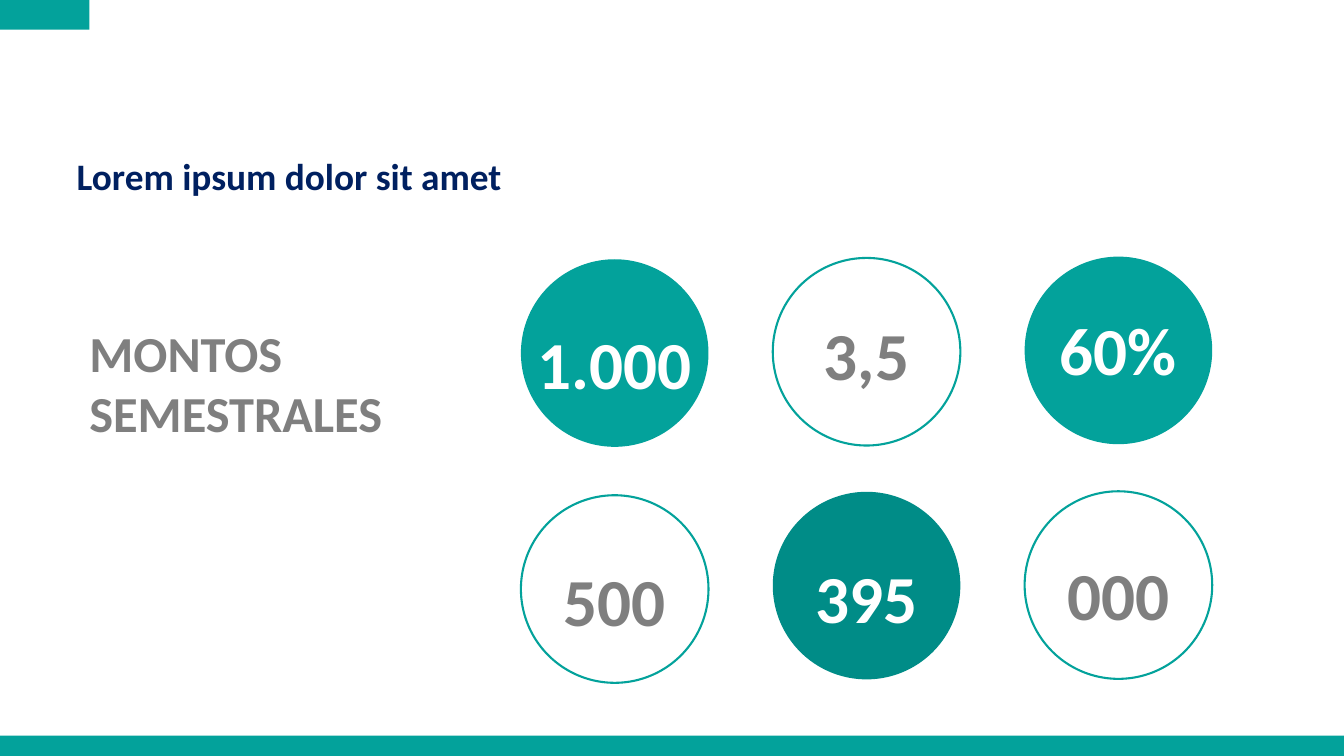
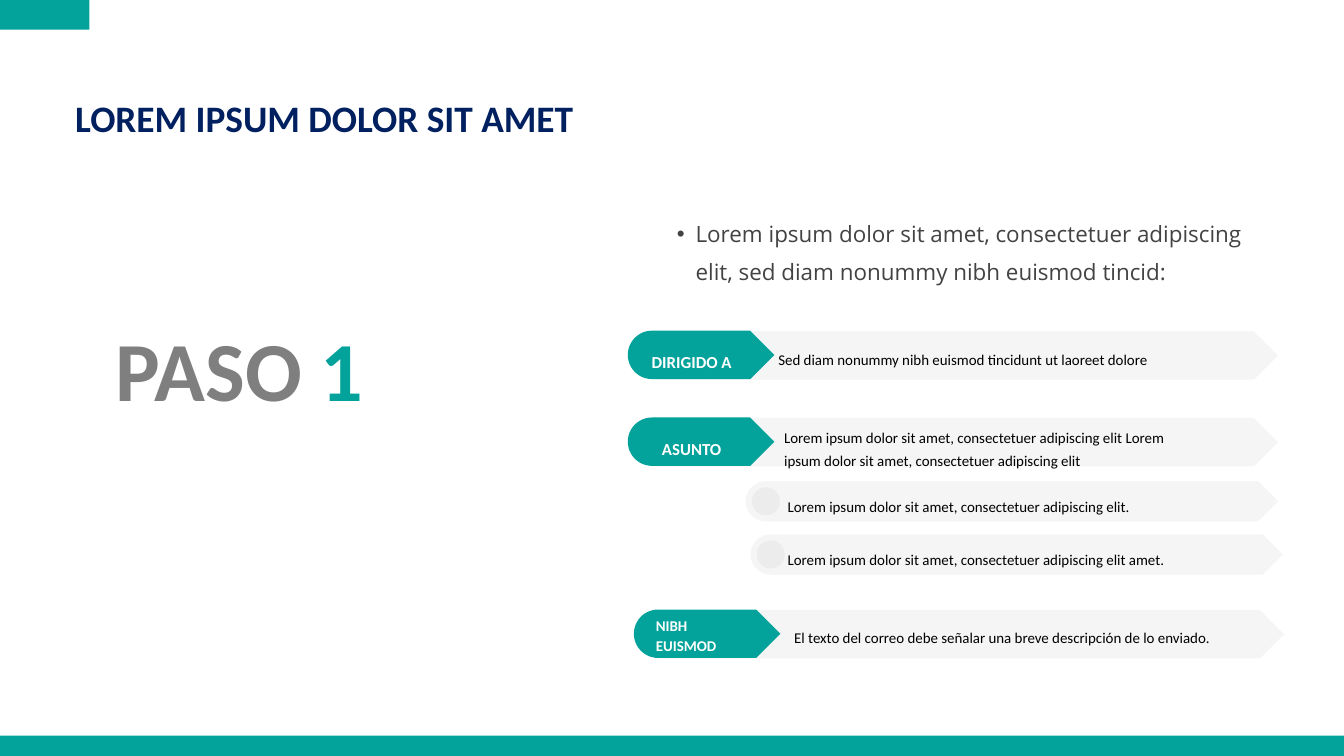
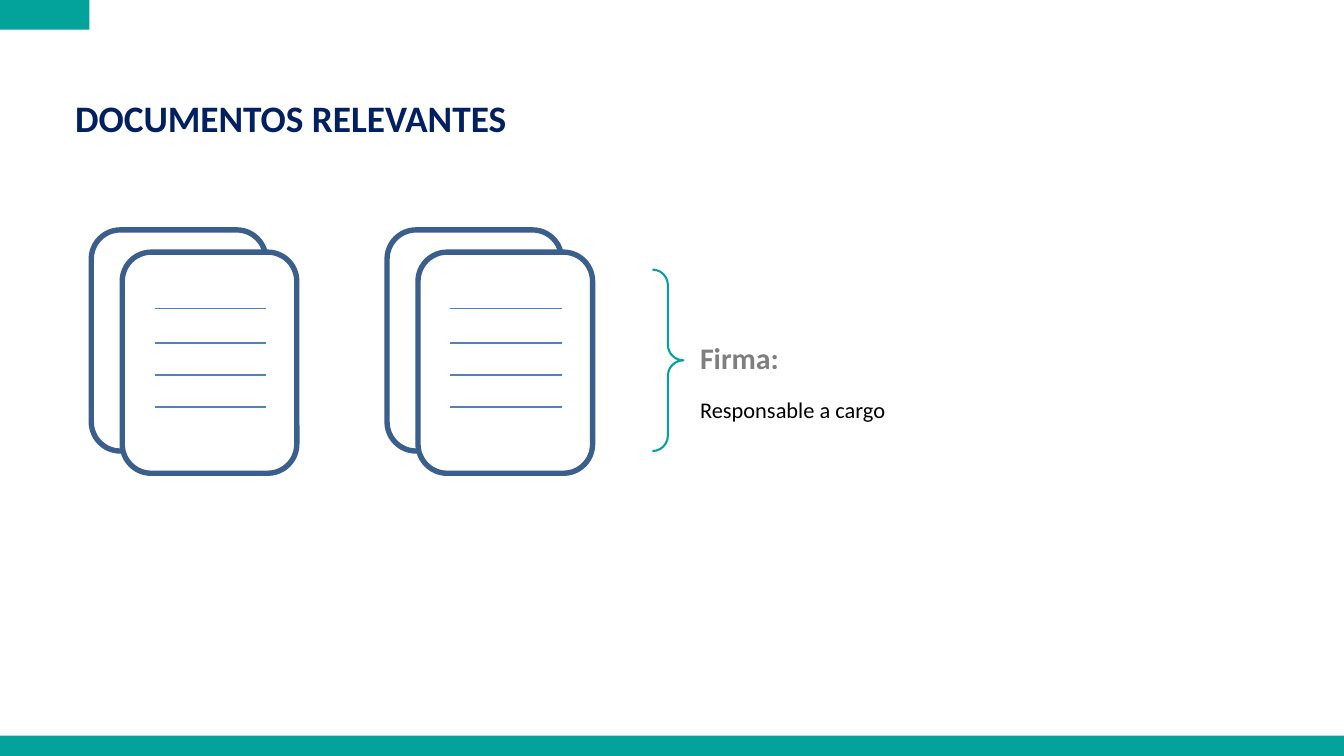
from math import cos, pi, sin

from lxml.etree import SubElement
from pptx import Presentation
from pptx.dml.color import RGBColor
from pptx.enum.shapes import MSO_CONNECTOR as Connector, MSO_SHAPE as Preset
from pptx.enum.text import MSO_ANCHOR as Anchor, MSO_AUTO_SIZE as AutoSize, PP_ALIGN as Align
from pptx.oxml.ns import qn
from pptx.util import Cm, Pt

# Palette and type
TEAL, DEEP_TEAL, NAVY, GREY = "03A29B", "008C87", "002060", "7F7F7F"
WHITE, BLACK, INK, SHADE = "FFFFFF", "000000", "434343", "191919"
PAGE_EDGE, RULE = "3A5F8C", "4F81BD"
CALIBRI, OPEN_SANS = "Calibri", "Open Sans"
SHADE_OPACITY = 4

TITLE_ONLY, TITLE_AND_BODY = 5, 1
TITLE_SIZE = (25.93, 1.7)


def rgb(hex_string):
    return RGBColor.from_string(hex_string)


def lengths(values):
    return [Cm(value) for value in values]


# Painting and text helpers
def paint(shape, fill=None, line=None, width=2.25, opacity=None):
    shape.shadow.inherit = False
    if fill:
        shape.fill.solid()
        shape.fill.fore_color.rgb = rgb(fill)
        if opacity:
            colour = shape.fill._xPr.find(qn("a:solidFill"))[0]
            SubElement(colour, qn("a:alpha"), val=str(opacity * 1000))
    else:
        shape.fill.background()
    if line:
        shape.line.color.rgb = rgb(line)
        shape.line.width = Pt(width)
    else:
        shape.line.fill.background()


def add_preset(slide, preset, box, **style):
    shape = slide.shapes.add_shape(preset, *lengths(box))
    paint(shape, **style)
    return shape


def add_run(paragraph, words, size, colour, bold=False, font=CALIBRI):
    run = paragraph.add_run()
    run.text = words
    run.font.name, run.font.size, run.font.bold = font, Pt(size), bold
    run.font.color.rgb = rgb(colour)


def prepare_frame(frame, inset=(0, 0)):
    frame.word_wrap = True
    frame.auto_size = AutoSize.NONE
    frame.vertical_anchor = Anchor.TOP
    frame.margin_left = frame.margin_right = Cm(inset[0])
    frame.margin_top = frame.margin_bottom = Cm(inset[1])


def format_paragraph(paragraph, align=Align.LEFT, spacing=1.0, before=0):
    paragraph.alignment = align
    paragraph.line_spacing = spacing
    paragraph.space_before = Pt(before)


def add_text(slide, box, *paragraphs, inset=(0, 0), before=0, **layout):
    """Each paragraph is a list of runs: (words, size, colour, bold)."""
    frame = slide.shapes.add_textbox(*lengths(box)).text_frame
    prepare_frame(frame, inset)
    for index, runs in enumerate(paragraphs):
        paragraph = frame.add_paragraph() if index else frame.paragraphs[0]
        format_paragraph(paragraph, before=before if index else 0, **layout)
        for run in runs:
            add_run(paragraph, *run)


def place(placeholder, box):
    placeholder.left, placeholder.top, placeholder.width, placeholder.height = lengths(box)
    prepare_frame(placeholder.text_frame)
    return placeholder.text_frame.paragraphs[0]


# Shared slide base: title, bottom band, corner tab
def add_base(deck, layout, title, left=2.84, top=3.25):
    slide = deck.slides.add_slide(deck.slide_layouts[layout])
    heading = place(slide.shapes.title, (left, top, *TITLE_SIZE))
    format_paragraph(heading, spacing=1.21)
    add_run(heading, title, 40, NAVY, True)
    add_preset(slide, Preset.RECTANGLE, (0, 27.81, 50.8, 0.77), fill=TEAL)
    add_preset(slide, Preset.RECTANGLE, (0, 0, 3.38, 1.12), fill=TEAL)
    return slide


# Slide 1: amounts in circles
def add_amount(slide, left, top, amount, drop, fill):
    diameter = 7.09
    outline = None if fill else TEAL
    add_preset(slide, Preset.OVAL, (left, top, diameter, diameter), fill=fill, line=outline)
    add_text(slide, (left, top + drop, diameter, 4.32),
             [(amount, 72, WHITE if fill else GREY, True)], align=Align.CENTER, spacing=1.4)


def build_amounts(deck):
    slide = add_base(deck, TITLE_ONLY, "Lorem ipsum dolor sit amet", 2.9, 5.44)
    amounts = [  # top, amount, drop of the number, fill
        (9.8, "1.000", 1.17, TEAL), (9.75, "3,5", 0.89, None), (9.7, "60%", 0.74, TEAL),
        (18.72, "500", 1.22, None), (18.59, "395", 1.22, DEEP_TEAL), (18.57, "000", 1.14, None),
    ]
    for index, amount in enumerate(amounts):
        add_amount(slide, 19.69 + index % 3 * 9.52, *amount)
    add_text(slide, (3.38, 12.17, 11.76, 4.62),
             [("MONTOS", 54, GREY, True)], [("SEMESTRALES", 54, GREY, True)])


# Slide 2: step with labelled arrow bars
def add_arrow_bar(slide, box, fill, opacity=None):
    """Bar with a half-round left end and a pointed right end."""
    left, top, width, height = box
    radius, steps = height / 2, 24
    right, middle = left + width, top + radius
    outline = [(right - radius, top), (right, middle), (right - radius, top + height)]
    for step in range(steps + 1):
        angle = pi / 2 + pi * step / steps
        outline.append((left + radius + radius * cos(angle), middle + radius * sin(angle)))
    points = [tuple(lengths(point)) for point in outline]
    builder = slide.shapes.build_freeform(*points[0])
    builder.add_line_segments(points[1:], close=True)
    paint(builder.convert_to_shape(), fill=fill, opacity=opacity)


def add_detail(slide, box, detail):
    add_text(slide, box, [(detail, 16, BLACK)], spacing=1.31)


def add_field(slide, left, top, label, detail, offset, width, stacked=False):
    add_arrow_bar(slide, (left, top, 24.33, 1.83), SHADE, SHADE_OPACITY)
    add_arrow_bar(slide, (left - 0.25, top - 0.02, 5.54, 1.83), TEAL)
    if stacked:
        add_text(slide, (left + 0.58, top + 0.18, 3, 1.27), [(label, 16, WHITE, True)],
                 spacing=1.11)
    else:
        add_text(slide, (left + 0.3, top + 0.46, 3.73, 0.84), [(label, 18, WHITE, True)],
                 align=Align.CENTER, spacing=1.4)
    add_detail(slide, (left + offset[0], top + offset[1], width, 0.71), detail)


def add_subject_item(slide, left, top, detail):
    height, dot = 1.52, 1.06
    margin = (height - dot) / 2
    add_arrow_bar(slide, (left, top, 20.12, height), SHADE, SHADE_OPACITY)
    add_preset(slide, Preset.OVAL, (left + margin, top + margin, dot, dot),
               fill=SHADE, opacity=SHADE_OPACITY)
    add_detail(slide, (29.77, top + 0.4, 18, 0.71), detail)


def add_intro(placeholder, box, words):
    item = place(placeholder, box)
    item.level = 1
    format_paragraph(item, spacing=1.4)
    properties = item._p.get_or_add_pPr()
    properties.set("marL", str(Cm(1.45)))
    properties.set("indent", str(-Cm(0.71)))
    SubElement(SubElement(properties, qn("a:buClr")), qn("a:srgbClr"), val=INK)
    SubElement(properties, qn("a:buFont"), typeface="Arial")
    SubElement(properties, qn("a:buChar"), char="•")
    add_run(item, words, 24, INK, font=OPEN_SANS)


def build_step(deck):
    slide = add_base(deck, TITLE_AND_BODY, "LOREM IPSUM DOLOR SIT AMET")
    add_intro(slide.placeholders[1], (24.84, 7.92, 22.71, 3.89),
              "Lorem ipsum dolor sit amet, consectetuer adipiscing elit, "
              "sed diam nonummy nibh euismod tincid:")
    add_text(slide, (3.38, 10.49, 11.35, 5.38),
             [("PASO ", 90, GREY, True), ("1", 90, TEAL, True)],
             align=Align.CENTER, spacing=1.4)
    add_field(slide, 23.98, 12.52, "DIRIGIDO A",
              "Sed diam nonummy nibh euismod tincidunt ut laoreet dolore", (5.44, 0.51), 18.11)
    add_field(slide, 23.98, 15.8, "ASUNTO",
              "Lorem ipsum dolor sit amet, consectetuer adipiscing elit Lorem "
              "ipsum dolor sit amet, consectetuer adipiscing elit", (5.66, 0.18), 15.6)
    add_subject_item(slide, 28.19, 18.19,
                     "Lorem ipsum dolor sit amet, consectetuer adipiscing elit.")
    add_subject_item(slide, 28.37, 20.2,
                     "Lorem ipsum dolor sit amet, consectetuer adipiscing elit amet.")
    add_field(slide, 24.21, 23.06, "NIBH EUISMOD",
              "El texto del correo debe señalar una breve descripción de lo enviado.",
              (5.81, 0.48), 18.5, stacked=True)


# Slide 3: documents and signature
def add_document(slide, left, top):
    page = (6.6, 8.36)
    edge = {"line": PAGE_EDGE, "width": 5.75}
    add_preset(slide, Preset.ROUNDED_RECTANGLE, (left, top, *page), **edge)
    add_preset(slide, Preset.ROUNDED_RECTANGLE, (left + 1.17, top + 0.84, *page),
               fill=WHITE, **edge)
    for drop in (2.97, 4.29, 5.49, 6.68):
        ends = (left + 2.39, top + drop, left + 6.6, top + drop)
        rule = slide.shapes.add_connector(Connector.STRAIGHT, *lengths(ends))
        rule.line.color.rgb = rgb(RULE)
        rule.line.width = Pt(0)
        SubElement(rule._element.spPr, qn("a:effectLst"))


def build_documents(deck):
    slide = add_base(deck, TITLE_ONLY, "DOCUMENTOS RELEVANTES")
    for left in (3.45, 14.63):
        add_document(slide, left, 8.69)
    brace = add_preset(slide, Preset.RIGHT_BRACE, (24.66, 10.19, 1.17, 6.86), line=TEAL)
    brace.adjustments[0] = 0.5
    brace.adjustments[1] = 0.5
    add_text(slide, (26.21, 12.7, 7.82, 3.43),
             [("Firma:", 32, GREY, True)], [("Responsable a cargo", 24, BLACK)],
             inset=(0.25, 0.13), before=22)


def main():
    deck = Presentation()
    deck.slide_width = Cm(50.8)
    deck.slide_height = deck.slide_width * 9 // 16
    build_amounts(deck)
    build_step(deck)
    build_documents(deck)
    deck.save("out.pptx")


if __name__ == "__main__":
    main()
